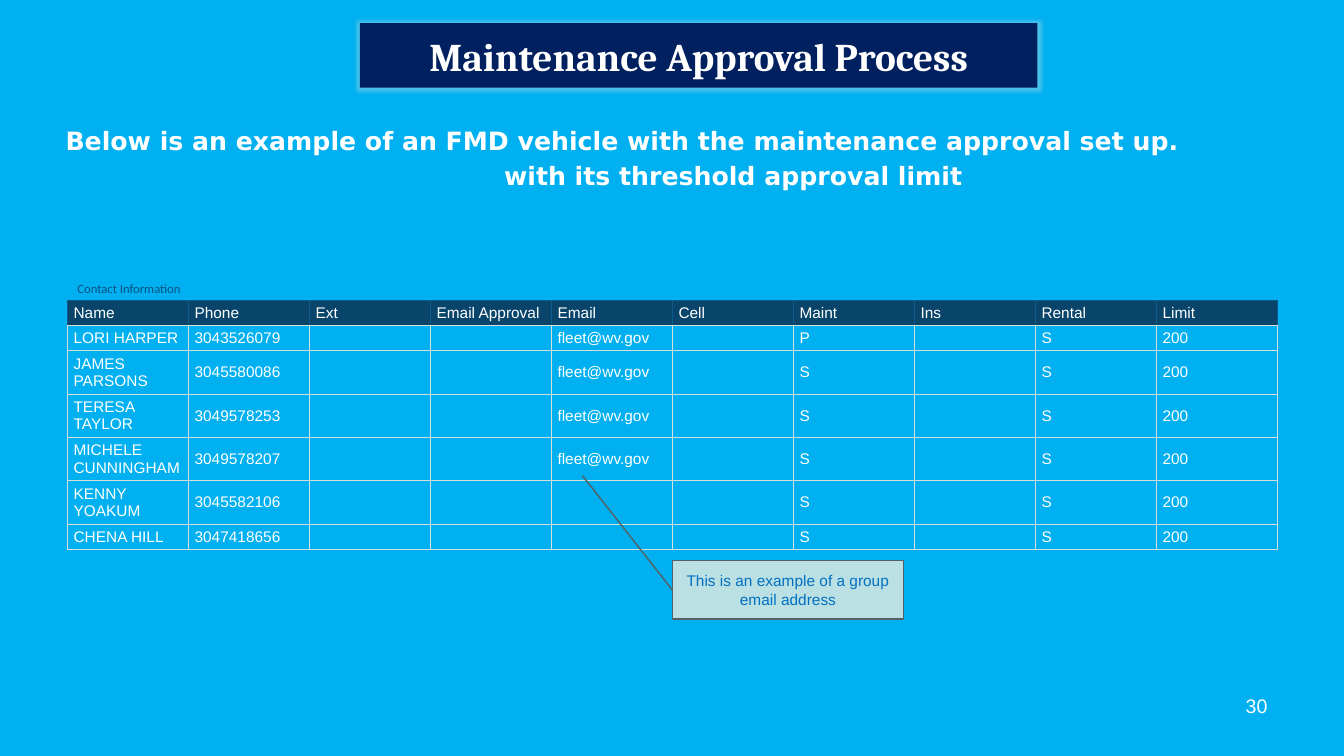
import dataclasses

import lxml.etree
import pptx
import pptx.dml.color
import pptx.enum.shapes
import pptx.enum.text
import pptx.oxml
import pptx.oxml.ns
import pptx.util

Inches = pptx.util.Inches
Pt = pptx.util.Pt
RGB = pptx.dml.color.RGBColor.from_string
ALIGN = pptx.enum.text.PP_ALIGN
ANCHOR = pptx.enum.text.MSO_ANCHOR
SHAPE = pptx.enum.shapes.MSO_SHAPE
qn = pptx.oxml.ns.qn


@dataclasses.dataclass(frozen=True)
class Theme:
    background: str = "00B0F0"
    title_fill: str = "002060"
    glow: str = "BBE0E3"
    white: str = "FFFFFF"
    header_fill: str = "09446B"
    header_line: str = "0C5A8E"
    grid_line: str = "D7DEE0"
    caption: str = "095182"
    callout_fill: str = "BBE0E3"
    callout_line: str = "526263"
    callout_text: str = "0070C0"
    heading_font: str = "Cambria"
    intro_font: str = "DejaVu Sans"
    body_font: str = "Arial"
    caption_font: str = "Calibri"
    title_size: int = 28
    intro_size: int = 18
    number_size: int = 14
    body_size: int = 11
    caption_size: int = 9


HEADERS = ["Name", "Phone", "Ext", "Email Approval", "Email",
           "Cell", "Maint", "Ins", "Rental", "Limit"]
GROUP_EMAIL = "fleet@wv.gov"
# Name, phone, email, maintenance role
CONTACTS = [
    ("LORI HARPER", "3043526079", GROUP_EMAIL, "P"),
    ("JAMES PARSONS", "3045580086", GROUP_EMAIL, "S"),
    ("TERESA TAYLOR", "3049578253", GROUP_EMAIL, "S"),
    ("MICHELE CUNNINGHAM", "3049578207", GROUP_EMAIL, "S"),
    ("KENNY YOAKUM", "3045582106", "", "S"),
    ("CHENA HILL", "3047418656", "", "S"),
]
ROW_HEIGHTS = [0.25, 0.25, 0.43, 0.43, 0.43, 0.43, 0.25]


def write(p, text, *, size, font, color, bold=False, align=ALIGN.LEFT,
          indent=None, before=None):
    """Put one formatted run in paragraph p."""
    p.alignment = align
    if indent is not None:
        p_pr = p._p.get_or_add_pPr()
        p_pr.set("marL", str(Inches(indent)))
        p_pr.set("indent", "0")
    if before is not None:
        p.space_before = Pt(before)
    if not text:
        # An empty cell still needs its type size to keep the row low
        end = lxml.etree.SubElement(p._p, qn("a:endParaRPr"))
        end.set("sz", str(size * 100))
        return
    r = p.add_run()
    r.text = text
    r.font.size = Pt(size)
    r.font.name = font
    r.font.bold = bold
    r.font.color.rgb = RGB(color)


class SlideBuilder:
    def __init__(self, prs, theme):
        self.theme = theme
        self.s = prs.slides.add_slide(prs.slide_layouts[0])
        self.s.background.fill.solid()
        self.s.background.fill.fore_color.rgb = RGB(theme.background)

    def place(self, sp, left, top, width, height):
        sp.left, sp.top = Inches(left), Inches(top)
        sp.width, sp.height = Inches(width), Inches(height)

    def frame(self, sp, anchor):
        tf = sp.text_frame
        tf.word_wrap = True
        tf.auto_size = pptx.enum.text.MSO_AUTO_SIZE.NONE
        tf.vertical_anchor = anchor
        return tf

    def title(self, text, *box):
        t, sp = self.theme, self.s.shapes.title
        self.place(sp, *box)
        sp.fill.solid()
        sp.fill.fore_color.rgb = RGB(t.title_fill)
        sp._element.spPr.append(pptx.oxml.parse_xml(
            f'<a:effectLst {pptx.oxml.ns.nsdecls("a")}><a:glow rad="63500">'
            f'<a:srgbClr val="{t.glow}"><a:alpha val="40000"/></a:srgbClr>'
            '</a:glow></a:effectLst>'))
        write(self.frame(sp, ANCHOR.MIDDLE).paragraphs[0], text,
              size=t.title_size, font=t.heading_font, color=t.white,
              bold=True, align=ALIGN.CENTER)

    def intro(self, lines, *box):
        t, sp = self.theme, self.s.placeholders[1]
        self.place(sp, *box)
        tf = self.frame(sp, ANCHOR.TOP)
        for i, (text, indent) in enumerate(lines):
            p = tf.add_paragraph() if i else tf.paragraphs[0]
            write(p, text, size=t.intro_size, font=t.intro_font,
                  color=t.white, bold=True, indent=indent,
                  before=3.6 if i else 0)

    def label(self, text, *box, anchor=ANCHOR.TOP, **style):
        sp = self.s.shapes.add_textbox(*map(Inches, box))
        tf = self.frame(sp, anchor)
        tf.margin_bottom = 0
        write(tf.paragraphs[0], text, **style)

    def cell(self, cell, text, header):
        t = self.theme
        tc_pr = cell._tc.get_or_add_tcPr()
        for side in "LRTB":
            color = t.header_line if header and side != "B" else t.grid_line
            ln = lxml.etree.SubElement(tc_pr, qn(f"a:ln{side}"), w=str(Pt(0.75)))
            fill = lxml.etree.SubElement(ln, qn("a:solidFill"))
            lxml.etree.SubElement(fill, qn("a:srgbClr"), val=color)
        if header:
            cell.fill.solid()
            cell.fill.fore_color.rgb = RGB(t.header_fill)
        else:
            cell.fill.background()
        cell.margin_left = cell.margin_right = Inches(0.06)
        cell.margin_top = cell.margin_bottom = Inches(0.03)
        cell.vertical_anchor = ANCHOR.MIDDLE
        write(cell.text_frame.paragraphs[0], text, size=t.body_size,
              font=t.body_font, color=t.white)

    def table(self, rows, heights, left, top, width):
        table = self.s.shapes.add_table(
            len(rows), len(rows[0]), Inches(left), Inches(top),
            Inches(width), Inches(sum(heights))).table
        table.first_row = table.horz_banding = False
        for row, height in zip(table.rows, heights):
            row.height = Inches(height)
        for i, values in enumerate(rows):
            for j, text in enumerate(values):
                self.cell(table.cell(i, j), text, header=i == 0)

    def callout(self, text, adjustments, *box):
        t = self.theme
        sp = self.s.shapes.add_shape(SHAPE.LINE_CALLOUT_1, *map(Inches, box))
        for i, value in enumerate(adjustments):
            sp.adjustments[i] = value
        sp.shadow.inherit = False
        sp.fill.solid()
        sp.fill.fore_color.rgb = RGB(t.callout_fill)
        sp.line.color.rgb = RGB(t.callout_line)
        sp.line.width = Pt(1)
        write(self.frame(sp, ANCHOR.MIDDLE).paragraphs[0], text,
              size=t.body_size, font=t.body_font, color=t.callout_text,
              align=ALIGN.CENTER)


def main():
    prs = pptx.Presentation()
    prs.slide_width, prs.slide_height = Inches(13.33), Inches(7.5)
    t = Theme()
    slide = SlideBuilder(prs, t)

    # Heading and introduction
    slide.title("Maintenance Approval Process", 3.57, 0.23, 6.72, 0.64)
    slide.intro([
        ("Below is an example of an FMD vehicle with the maintenance approval set up.", 0.7),
        ("with its threshold approval limit", 5.05),
    ], -0.15, 1.19, 13.33, 4.09)

    # Slide number
    slide.label("30", 9.56, 6.83, 3.11, 0.52, size=t.number_size,
                font=t.body_font, color=t.white, align=ALIGN.RIGHT)

    # Contact table with its caption
    rows = [HEADERS] + [
        [name, phone, "", "", email, "", maint, "", "S", "200"]
        for name, phone, email, maint in CONTACTS]
    slide.table(rows, ROW_HEIGHTS, 0.67, 2.98, 12)
    slide.label("Contact Information", 0.67, 2.74, 12, 0.2,
                anchor=ANCHOR.BOTTOM, size=t.caption_size,
                font=t.caption_font, color=t.caption)

    # Callout pointing at the group email
    slide.callout("This is an example of a group email address",
                  (0.51, 0, -1.45, -0.39), 6.67, 5.56, 2.29, 0.58)

    prs.save("out.pptx")


if __name__ == "__main__":
    main()
